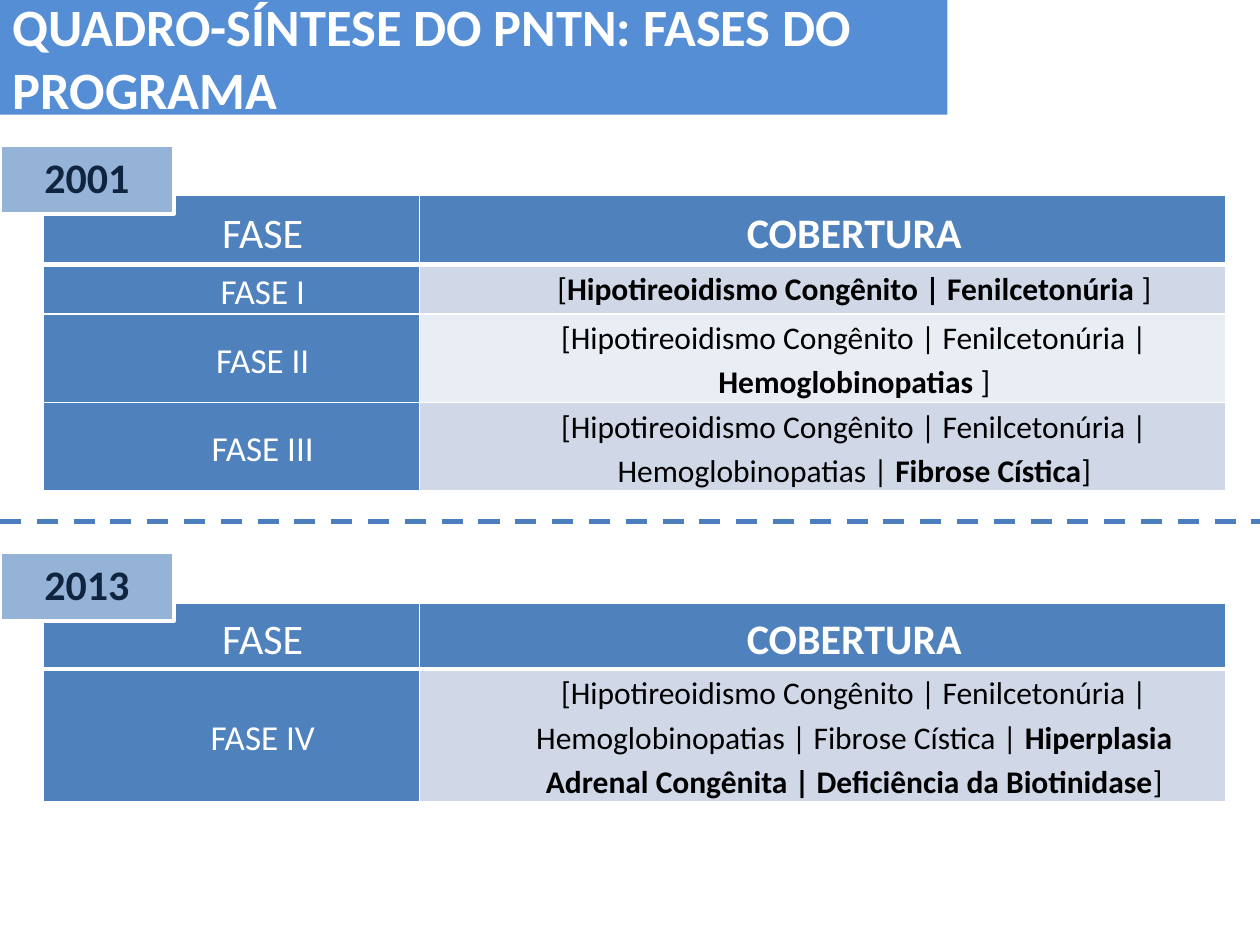
"""Build the summary slide of the PNTN programme phases."""
from lxml import etree
from pptx import Presentation
from pptx import util as u
from pptx.dml.color import RGBColor
from pptx.enum import dml, shapes, text
from pptx.oxml import ns

WHITE = RGBColor(0xFF, 0xFF, 0xFF)
BLACK = RGBColor(0x00, 0x00, 0x00)
NAVY = RGBColor(0x0F, 0x24, 0x3E)
TITLE_BLUE = RGBColor(0x55, 0x8E, 0xD5)
HEAD_BLUE = RGBColor(0x4F, 0x81, 0xBD)
YEAR_BLUE = RGBColor(0x95, 0xB3, 0xD7)
LINE_BLUE = RGBColor(0x4B, 0x7E, 0xBC)
BANDS = (RGBColor(0xD0, 0xD8, 0xE8), RGBColor(0xE9, 0xED, 0xF4))

PHASES_2001 = [
    ("FASE I", "[", "Hipotireoidismo Congênito | Fenilcetonúria "),
    ("FASE II", "[Hipotireoidismo Congênito | Fenilcetonúria | ", "Hemoglobinopatias "),
    ("FASE III", "[Hipotireoidismo Congênito | Fenilcetonúria | Hemoglobinopatias | ",
     "Fibrose Cística"),
]
PHASES_2013 = [
    ("FASE IV",
     "[Hipotireoidismo Congênito | Fenilcetonúria | Hemoglobinopatias | Fibrose Cística | ",
     "Hiperplasia Adrenal Congênita | Deficiência da Biotinidase"),
]


class SlideBuilder:
    """Holds the style and the current slide."""

    font = "Calibri"
    columns = (2.99, 6.4)

    def __init__(self, prs):
        self.s = prs.slides.add_slide(prs.slide_layouts[5])

    def run(self, p, value, size, color, bold=False):
        r = p.add_run()
        r.text = value
        r.font.name, r.font.size, r.font.bold = self.font, u.Pt(size), bold
        r.font.color.rgb = color

    def title(self, value, width, height):
        sp = self.s.shapes.title
        sp.left, sp.top = u.Inches(0), u.Inches(0)
        sp.width, sp.height = u.Inches(width), u.Inches(height)
        sp.fill.solid()
        sp.fill.fore_color.rgb = TITLE_BLUE
        tf = sp.text_frame
        tf.auto_size = text.MSO_AUTO_SIZE.NONE
        tf.vertical_anchor = text.MSO_ANCHOR.MIDDLE
        p = tf.paragraphs[0]
        p.alignment = text.PP_ALIGN.LEFT
        self.run(p, value, 30, WHITE, True)

    def year(self, value, top):
        sp = self.s.shapes.add_shape(shapes.MSO_SHAPE.RECTANGLE, u.Inches(0), u.Inches(top),
                                     u.Inches(1.38), u.Inches(0.55))
        sp.shadow.inherit = False
        sp.fill.solid()
        sp.fill.fore_color.rgb = YEAR_BLUE
        sp.line.color.rgb, sp.line.width = WHITE, u.Pt(2)
        tf = sp.text_frame
        tf.margin_left = tf.margin_right = tf.margin_top = tf.margin_bottom = u.Inches(0.05)
        tf.vertical_anchor = text.MSO_ANCHOR.MIDDLE
        p = tf.paragraphs[0]
        p.alignment, p.line_spacing = text.PP_ALIGN.CENTER, 0.9
        self.run(p, value, 24, NAVY, True)

    def divider(self, top):
        sp = self.s.shapes.add_connector(shapes.MSO_CONNECTOR.STRAIGHT, u.Inches(0),
                                         u.Inches(top), u.Inches(10), u.Inches(top))
        sp.line.color.rgb, sp.line.width = LINE_BLUE, u.Pt(3)
        sp.line.dash_style = dml.MSO_LINE.DASH
        etree.SubElement(sp._element.spPr, ns.qn("a:effectLst"))

    def borders(self, cell, bottom):
        tc_pr = cell._tc.get_or_add_tcPr()
        for side, width in (("L", 1), ("R", 1), ("T", 1), ("B", bottom)):
            ln = etree.SubElement(tc_pr, ns.qn(f"a:ln{side}"), w=str(u.Pt(width)))
            fill = etree.SubElement(ln, ns.qn("a:solidFill"))
            etree.SubElement(fill, ns.qn("a:srgbClr"), val=str(WHITE))

    def cell(self, cell, runs, fill, bottom=1, anchor=text.MSO_ANCHOR.MIDDLE):
        self.borders(cell, bottom)
        cell.fill.solid()
        cell.fill.fore_color.rgb = fill
        cell.margin_left = cell.margin_right = u.Inches(0.05)
        cell.margin_top = cell.margin_bottom = 0
        cell.vertical_anchor = anchor
        p = cell.text_frame.paragraphs[0]
        p.alignment, p.line_spacing = text.PP_ALIGN.CENTER, 1.15
        p_pr = p._p.get_or_add_pPr()
        p_pr.set("marL", str(u.Inches(0.5)))
        p_pr.set("indent", "0")
        for r in runs:
            self.run(p, *r)

    def table(self, top, heights, phases):
        tbl = self.s.shapes.add_table(len(heights), 2, u.Inches(0.34), u.Inches(top),
                                      u.Inches(sum(self.columns)),
                                      u.Inches(sum(heights))).table
        for column, width in zip(tbl.columns, self.columns):
            column.width = u.Inches(width)
        for row, height in zip(tbl.rows, heights):
            row.height = u.Inches(height)
        self.cell(tbl.cell(0, 0), [("FASE", 24, WHITE)], HEAD_BLUE, 3)
        self.cell(tbl.cell(0, 1), [("COBERTURA", 24, WHITE, True)], HEAD_BLUE, 3)
        for i, (phase, earlier, added) in enumerate(phases, 1):
            self.cell(tbl.cell(i, 0), [(phase, 20, WHITE)], HEAD_BLUE)
            runs = [(earlier, 18, BLACK), (added, 18, BLACK, True), ("]", 18, BLACK)]
            self.cell(tbl.cell(i, 1), runs, BANDS[(i - 1) % 2], anchor=text.MSO_ANCHOR.TOP)


def main():
    prs = Presentation()
    prs.slide_width, prs.slide_height = u.Inches(10), u.Inches(7.5)
    b = SlideBuilder(prs)
    b.title("QUADRO-SÍNTESE DO PNTN: FASES DO PROGRAMA", 7.52, 0.91)
    b.table(1.55, (0.55, 0.38, 0.69, 0.69), PHASES_2001)
    b.table(4.79, (0.52, 1.04), PHASES_2013)
    b.divider(4.14)
    b.year("2001", 1.15)
    b.year("2013", 4.38)
    prs.save("out.pptx")


if __name__ == "__main__":
    main()
